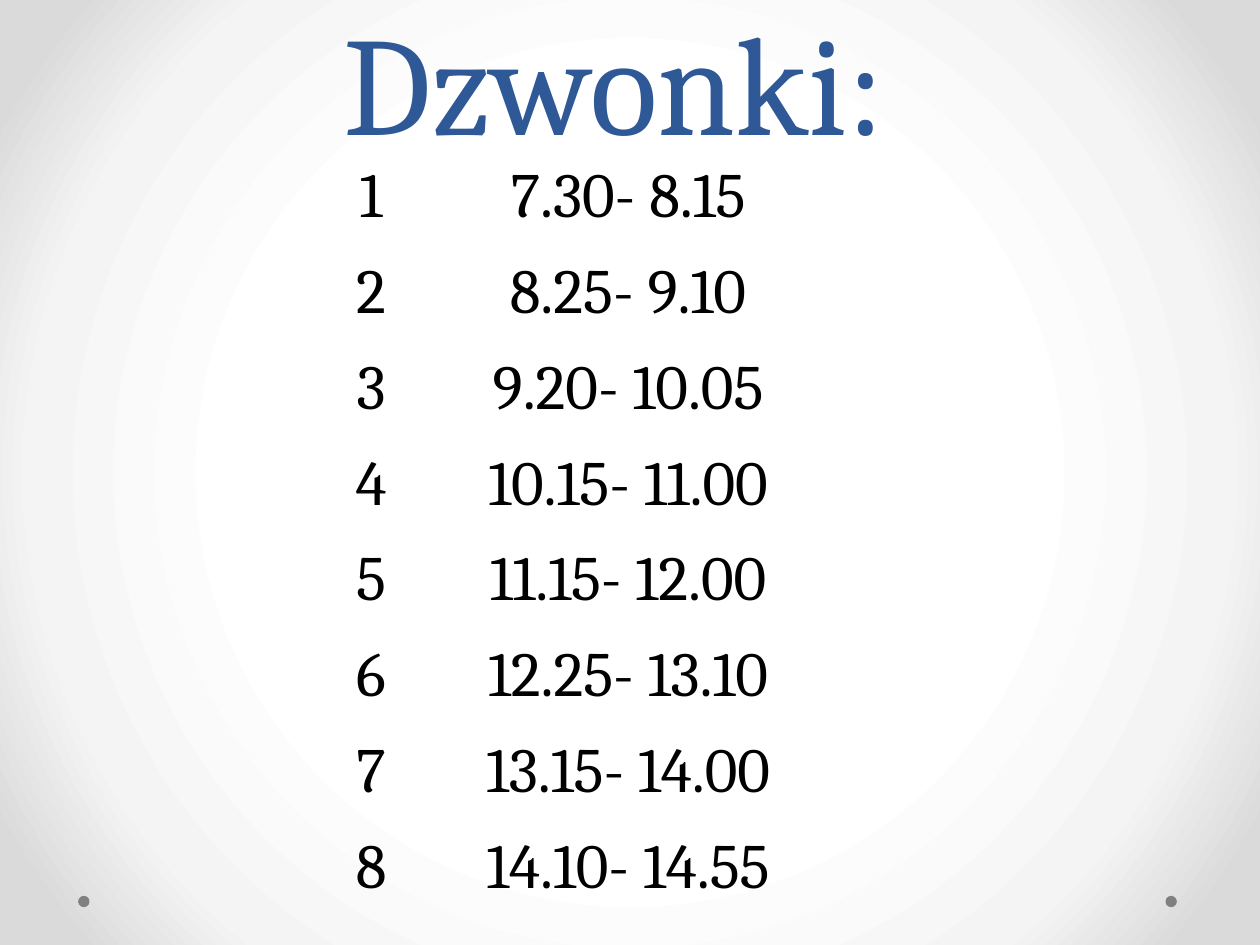
import pptx
import pptx.dml.color
import pptx.enum.shapes
import pptx.enum.text
import pptx.oxml
import pptx.oxml.ns
import pptx.util
from pptx.util import Inches

TITLE = "Dzwonki:"
BELLS = [
    "7.30- 8.15", "8.25- 9.10", "9.20- 10.05", "10.15- 11.00",
    "11.15- 12.00", "12.25- 13.10", "13.15- 14.00", "14.10- 14.55",
]
COLS = [0.77, 3.31]
ROW = 0.76
STOPS = [(50, "FFFFFF"), (76, "F4F4F4"), (92, "DADADA")]
DOTS = [0.62, 9.25]
NO_GRID = "{2D5ABB26-0587-4C30-8999-92F81FD0307C}"


def color(code):
    return pptx.dml.color.RGBColor.from_string(code)


def style(para, size, code):
    para.alignment = pptx.enum.text.PP_ALIGN.CENTER
    para.font.name = "Cambria"
    para.font.size = pptx.util.Pt(size)
    para.font.color.rgb = color(code)


def paint(slide):
    """Give the slide a round gradient, lightest in the centre."""
    slide.background.fill.gradient()
    old = slide.background._cSld.bg.bgPr.find(pptx.oxml.ns.qn("a:gradFill"))
    stops = "".join(
        f'<a:gs pos="{pos * 1000}"><a:srgbClr val="{code}"/></a:gs>'
        for pos, code in STOPS)
    new = pptx.oxml.parse_xml(
        f'<a:gradFill {pptx.oxml.ns.nsdecls("a")} rotWithShape="1">'
        f'<a:gsLst>{stops}</a:gsLst><a:path path="circle">'
        '<a:fillToRect l="50000" t="50000" r="50000" b="50000"/>'
        '</a:path></a:gradFill>')
    old.getparent().replace(old, new)


def add_dots(slide):
    for left in DOTS:
        dot = slide.shapes.add_shape(
            pptx.enum.shapes.MSO_SHAPE.OVAL,
            Inches(left), Inches(7.11), Inches(0.09), Inches(0.09))
        dot.shadow.inherit = False
        dot.fill.solid()
        dot.fill.fore_color.rgb = color("808080")
        dot.line.fill.background()


def set_title(slide):
    title = slide.shapes.title
    title.left, title.top = Inches(0.75), Inches(0.01)
    title.width, title.height = Inches(8.25), Inches(1.34)
    frame = title.text_frame
    frame.text = TITLE
    frame.auto_size = pptx.enum.text.MSO_AUTO_SIZE.NONE
    frame.vertical_anchor = pptx.enum.text.MSO_ANCHOR.BOTTOM
    style(frame.paragraphs[0], 80, "2F5897")


def add_bells(slide):
    table = slide.shapes.add_table(
        len(BELLS), len(COLS), Inches(2.56), Inches(1.23),
        Inches(sum(COLS)), Inches(ROW * len(BELLS))).table
    table.first_row = table.horz_banding = False
    table._tbl.tblPr.find(pptx.oxml.ns.qn("a:tableStyleId")).text = NO_GRID
    for col, width in zip(table.columns, COLS):
        col.width = Inches(width)
    for num, hours in enumerate(BELLS, 1):
        row = table.rows[num - 1]
        row.height = Inches(ROW)
        for cell, text in zip(row.cells, (str(num), hours)):
            cell.text = text
            cell.fill.background()
            cell.margin_left = cell.margin_right = Inches(0.05)
            cell.margin_top = cell.margin_bottom = Inches(0.05)
            style(cell.text_frame.paragraphs[0], 36, "000000")


def main():
    deck = pptx.Presentation()
    deck.slide_width, deck.slide_height = Inches(10), Inches(7.5)
    slide = deck.slides.add_slide(deck.slide_layouts[5])
    paint(slide)
    add_dots(slide)
    set_title(slide)
    add_bells(slide)
    deck.save("out.pptx")


if __name__ == "__main__":
    main()
